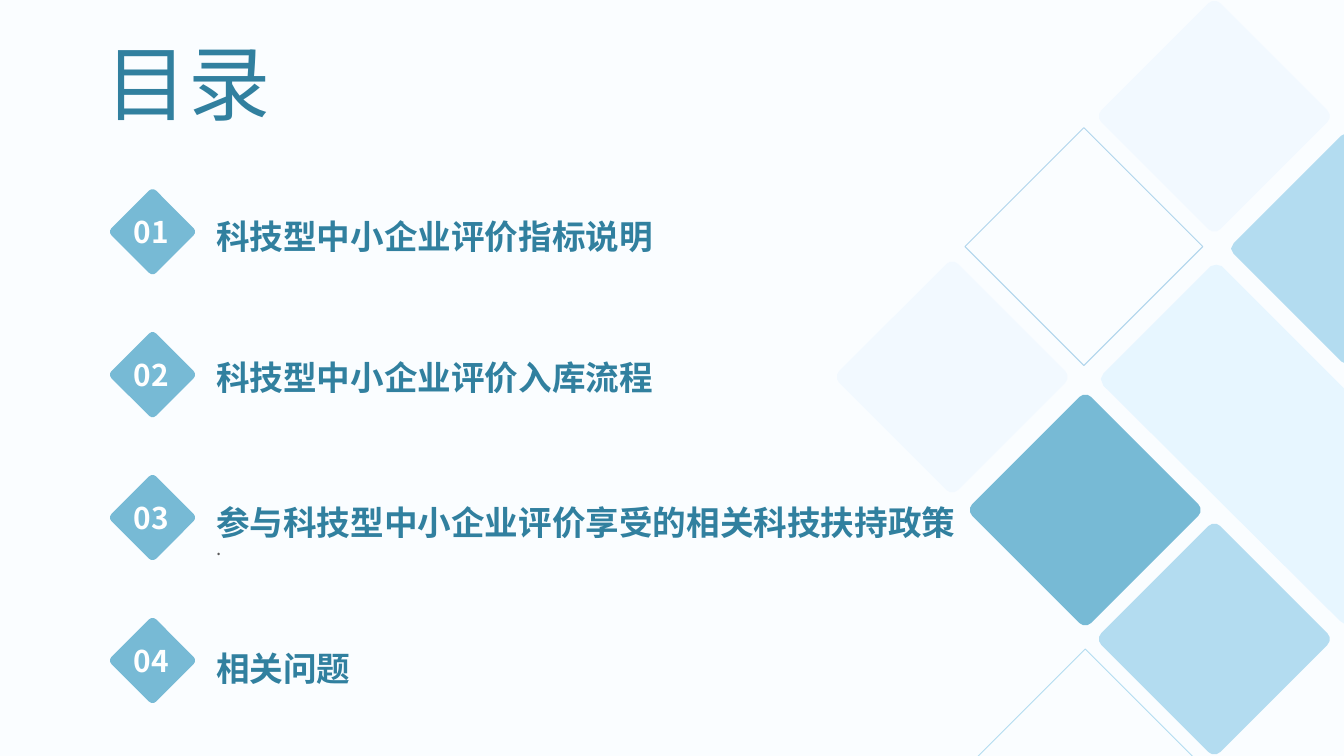
from dataclasses import dataclass
from math import sqrt

from pptx import Presentation
from pptx.dml.color import RGBColor
from pptx.enum.shapes import MSO_SHAPE as SHAPE
from pptx.enum.text import MSO_AUTO_SIZE as FIT, PP_ALIGN as ALIGN
from pptx.oxml.ns import qn
from pptx.util import Inches, Pt


@dataclass(frozen=True)
class Theme:
    font: str = "Noto Sans CJK SC"
    background: str = "FAFDFF"
    title: str = "31809F"
    accent: str = "77BAD5"
    sky: str = "B3DCF0"
    outline: str = "B0D5EC"
    pale: str = "F2F9FF"
    band: str = "E7F6FF"
    grey: str = "595959"
    white: str = "FFFFFF"
    title_size: int = 44
    item_size: int = 18
    number_size: int = 16
    note_size: int = 10


T = Theme()
WIDTH = 10
HEIGHT = WIDTH * 9 / 16
TILE = 1.73
ITEMS = [  # text, top offset from its badge, width
    ("科技型中小企业评价指标说明", 0.07, 3.47),
    ("科技型中小企业评价入库流程", 0.05, 3.47),
    ("参与科技型中小企业评价享受的相关科技扶持政策", 0.07, 5.73),
    ("相关问题", 0.09, 1.21),
]


def rgb(color):
    return RGBColor.from_string(color)


def paint(sp, color):
    sp.shadow.inherit = False
    sp.fill.solid()
    sp.fill.fore_color.rgb = rgb(color)
    sp.line.fill.background()


def add_text(shapes, box, text, size, color, bold=False, align=ALIGN.LEFT, wrap=True):
    tf = shapes.add_textbox(*map(Inches, box)).text_frame
    tf.word_wrap = wrap
    tf.auto_size = FIT.SHAPE_TO_FIT_TEXT
    p = tf.paragraphs[0]
    p.alignment = align
    r = p.add_run()
    r.text = text
    for name, value in dict(name=T.font, size=Pt(size), bold=bold).items():
        setattr(r.font, name, value)
    r.font.color.rgb = rgb(color)
    r.font._element.get_or_add_latin().addnext(
        r.font._element.makeelement(qn("a:ea"), {"typeface": T.font}))


def add_tile(shapes, left, top, side, radius, color):
    """Square with rounded corners, turned to stand on one corner."""
    sp = shapes.add_shape(SHAPE.ROUNDED_RECTANGLE, *map(Inches, (left, top, side, side)))
    sp.adjustments[0] = radius
    sp.rotation = 45
    paint(sp, color)


def add_polygon(shapes, points, color):
    start, *rest = [tuple(map(Inches, point)) for point in points]
    builder = shapes.build_freeform(*start)
    builder.add_line_segments(rest, close=True)
    paint(builder.convert_to_shape(), color)


def add_outline(shapes, left, top, size, color):
    sp = shapes.add_shape(SHAPE.DIAMOND, *map(Inches, (left, top, size, size)))
    sp.shadow.inherit = False
    sp.fill.background()
    sp.line.color.rgb = rgb(color)
    sp.line.width = Pt(0.5)


def add_pattern(shapes, left, top, right):
    """Diamond pattern; tiles at the right edge are cut off there."""
    side = 1.77 / sqrt(2)
    inset = (TILE - side) / 2
    for dx, dy, color in [(1.95, 3.89, T.sky), (1.95, 0, T.pale),
                          (0, 1.94, T.pale), (0.99, 2.93, T.accent)]:
        add_tile(shapes, left + dx + inset, top + dy + inset, side, 0.05, color)
    for dx, dy, color in [(0.97, 4.83, T.sky), (0.96, 0.95, T.outline)]:
        add_outline(shapes, left + dx, top + dy, 1.77, color)
    cut_tile = [(0, 1), (0, 2.7), (-0.02, 2.69), (-0.82, 1.89),
                (-0.84, 1.85), (-0.82, 1.81), (-0.02, 1.01)]
    band = [(-0.95, 1.97), (-0.91, 1.98), (0, 2.89), (0, 4.64), (-0.03, 4.62),
            (-1.79, 2.87), (-1.81, 2.82), (-1.79, 2.78), (-0.99, 1.98)]
    for points, color in [(cut_tile, T.sky), (band, T.band)]:
        add_polygon(shapes, [(right + x, top + y) for x, y in points], color)


def add_badge(shapes, left, top, number):
    group = shapes.add_group_shape().shapes
    add_tile(group, left + 0.03, top, 0.47, 0.08, T.accent)
    add_text(group, (left, top + 0.05, 0.51, 0.37), f"{number:02}",
             T.number_size, T.white, bold=True, align=ALIGN.CENTER)


def add_contents(shapes, left, top, height):
    pitch = height / (len(ITEMS) - 1)
    for i, (text, offset, width) in enumerate(ITEMS):
        y = top + i * pitch
        add_text(shapes, (left + 0.64, y + offset, width, 0.4), text,
                 T.item_size, T.title, bold=True, wrap=False)
        if i == 2:
            add_text(shapes, (left + 0.64, y + 0.33, 3.97, 0.27), ".",
                     T.note_size, T.grey)
        add_badge(shapes, left, y, i + 1)


def main():
    prs = Presentation()
    prs.slide_width, prs.slide_height = Inches(WIDTH), Inches(HEIGHT)
    s = prs.slides.add_slide(prs.slide_layouts[6])
    s.background.fill.solid()
    s.background.fill.fore_color.rgb = rgb(T.background)
    add_pattern(s.shapes, 6.22, 0, WIDTH)
    add_text(s.shapes, (0.52, 0.19, 1.76, 0.84), "目录",
             T.title_size, T.title, align=ALIGN.CENTER)
    add_contents(s.shapes, 0.87, 1.49, 3.19)
    prs.save("out.pptx")


if __name__ == "__main__":
    main()
